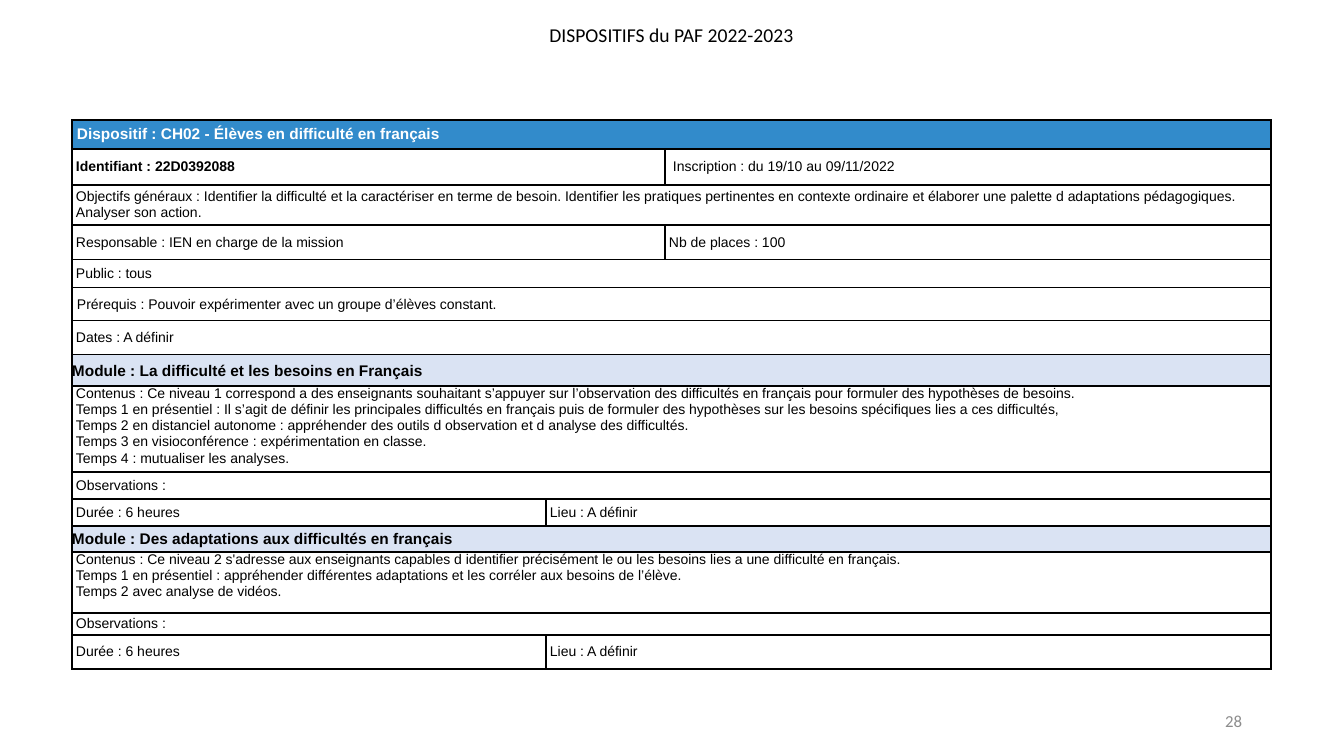
from dataclasses import dataclass
from typing import Optional, Union

from lxml.etree import SubElement
from pptx import Presentation
from pptx.dml.color import RGBColor
from pptx.enum.text import MSO_ANCHOR as Anchor, MSO_AUTO_SIZE as AutoSize, PP_ALIGN as Align
from pptx.oxml.ns import qn
from pptx.slide import Slide
from pptx.table import _Cell as TableCell
from pptx.text.text import TextFrame
from pptx.util import Emu, Pt

PX = 914400 / 100.8


@dataclass(frozen=True)
class Theme:
    black: str = "000000"
    white: str = "FFFFFF"
    grey: str = "8C8C8C"
    header: str = "328BCB"
    module: str = "DAE3F3"
    heading_font: str = "Calibri"
    table_font: str = "Arial"
    title_size: int = 14
    number_size: int = 12
    band_size: int = 11
    cell_size: int = 10
    border: float = 1


THEME = Theme()


@dataclass(frozen=True)
class Entry:
    """Text of one cell; each line is a paragraph."""
    lines: tuple[str, ...]
    size: int = THEME.cell_size
    bold: bool = False
    color: str = THEME.black
    fill: Optional[str] = None
    indent: int = 4
    before: float = 1.4
    spacing: Union[float, Pt, None] = None
    anchor: Anchor = Anchor.MIDDLE


@dataclass(frozen=True)
class Row:
    height: int
    entries: tuple[Entry, ...]


@dataclass(frozen=True)
class Grid:
    top: int
    columns: tuple[int, int]
    rows: tuple[Row, ...]


def px(length: float) -> Emu:
    return Emu(round(length * PX))


def line(text: str, **style) -> Entry:
    return Entry((text,), **style)


def module(name: str) -> Entry:
    return line(f"Module : {name}", size=THEME.band_size, bold=True,
                fill=THEME.module, indent=0, before=2)


def contents(*lines: str) -> Entry:
    return Entry(lines, before=0.8, spacing=0.97, anchor=Anchor.TOP)


OBSERVATIONS = (line("Observations :"),)
PRACTICAL = (line("Durée : 6 heures"), line("Lieu : A définir"))

GRIDS = (
    Grid(120, (593, 606), (
        Row(29, (line("Dispositif : CH02 - Élèves en difficulté en français", size=THEME.band_size,
                      bold=True, color=THEME.white, fill=THEME.header, indent=5, before=0.9),)),
        Row(36, (line("Identifiant : 22D0392088", bold=True, before=2.6),
                 line("Inscription : du 19/10 au 09/11/2022", indent=8, before=0))),
        Row(40, (Entry((
            "Objectifs généraux : Identifier la difficulté et la caractériser en terme de besoin. "
            "Identifier les pratiques pertinentes en contexte ordinaire et élaborer une palette "
            "d adaptations pédagogiques.",
            "Analyser son action."), before=0.2, spacing=Pt(11.3)),)),
        Row(35, (line("Responsable : IEN en charge de la mission", before=2.2),
                 line("Nb de places : 100", before=2.2))),
        Row(28, (line("Public : tous", before=0.5),)),
        Row(33, (line("Prérequis : Pouvoir expérimenter avec un groupe d’élèves constant.", indent=5),)),
        Row(34, (line("Dates : A définir", before=1.8),)),
        Row(32, (module("La difficulté et les besoins en Français"),)),
    )),
    Grid(386, (474, 725), (
        Row(86, (contents(
            "Contenus : Ce niveau 1 correspond a des enseignants souhaitant s’appuyer sur l’observation "
            "des difficultés en français pour formuler des hypothèses de besoins.",
            "Temps 1 en présentiel : Il s’agit de définir les principales difficultés en français puis "
            "de formuler des hypothèses sur les besoins spécifiques lies a ces difficultés,",
            "Temps 2 en distanciel autonome : appréhender des outils d observation et d analyse "
            "des difficultés.",
            "Temps 3 en visioconférence : expérimentation en classe.",
            "Temps 4 : mutualiser les analyses."),)),
        Row(27, OBSERVATIONS),
        Row(27, PRACTICAL),
        Row(26, (module("Des adaptations aux difficultés en français"),)),
    )),
    Grid(552, (474, 725), (
        Row(61, (contents(
            "Contenus : Ce niveau 2 s'adresse aux enseignants capables d identifier précisément "
            "le ou les besoins lies a une difficulté en français.",
            "Temps 1 en présentiel : appréhender différentes adaptations et les corréler aux besoins "
            "de l’élève.",
            "Temps 2 avec analyse de vidéos."),)),
        Row(22, OBSERVATIONS),
        Row(34, PRACTICAL),
    )),
)


def write(frame: TextFrame, *lines: str, size: float, color: str, font: str, bold: bool = False,
          align: Align = Align.LEFT, indent: int = 0, before: float = 0,
          spacing: Union[float, Pt, None] = None) -> None:
    frame.text = "\n".join(lines)
    for paragraph in frame.paragraphs:
        paragraph.alignment = align
        paragraph.space_before = Pt(before)
        paragraph.line_spacing = spacing
        paragraph._p.get_or_add_pPr().set("marL", str(px(indent)))
        style = paragraph.runs[0].font
        style.name, style.size, style.bold = font, Pt(size), bold
        style.color.rgb = RGBColor.from_string(color)


def outline(cell: TableCell) -> None:
    properties = cell._tc.get_or_add_tcPr()
    for side in ("a:lnL", "a:lnR", "a:lnT", "a:lnB"):
        edge = SubElement(properties, qn(side), w=str(Pt(THEME.border)))
        SubElement(SubElement(edge, qn("a:solidFill")), qn("a:srgbClr"), val=THEME.black)


def fill_cell(cell: TableCell, entry: Entry) -> None:
    cell.vertical_anchor = entry.anchor
    if entry.fill:
        cell.fill.solid()
        cell.fill.fore_color.rgb = RGBColor.from_string(entry.fill)
    write(cell.text_frame, *entry.lines, size=entry.size, color=entry.color,
          font=THEME.table_font, bold=entry.bold, indent=entry.indent,
          before=entry.before, spacing=entry.spacing)


def add_grid(slide: Slide, grid: Grid) -> None:
    height = sum(row.height for row in grid.rows)
    table = slide.shapes.add_table(len(grid.rows), len(grid.columns), px(72), px(grid.top),
                                   px(sum(grid.columns)), px(height)).table
    table.first_row = table.horz_banding = False
    for column, width in zip(table.columns, grid.columns):
        column.width = px(width)
    for index, row in enumerate(grid.rows):
        table.rows[index].height = px(row.height)
        for cell in table.rows[index].cells:
            cell.margin_left = cell.margin_right = cell.margin_top = cell.margin_bottom = 0
            outline(cell)
            cell.fill.background()
        if len(row.entries) == 1:
            table.cell(index, 0).merge(table.cell(index, 1))
        for position, entry in enumerate(row.entries):
            fill_cell(table.cell(index, position), entry)


def main() -> None:
    deck = Presentation()
    deck.slide_width, deck.slide_height = px(1344), px(756)
    slide = deck.slides.add_slide(deck.slide_layouts[5])

    title = slide.shapes.title
    title.left, title.top, title.width, title.height = px(535), px(18), px(273), px(34)
    title.text_frame.auto_size = AutoSize.NONE
    title.text_frame.word_wrap = False
    title.text_frame.vertical_anchor = Anchor.TOP
    write(title.text_frame, "DISPOSITIFS du PAF 2022-2023", size=THEME.title_size,
          color=THEME.black, font=THEME.heading_font, align=Align.CENTER)

    page = slide.shapes.add_textbox(px(950), px(701), px(302), px(40)).text_frame
    page.word_wrap = True
    page.vertical_anchor = Anchor.MIDDLE
    write(page, "28", size=THEME.number_size, color=THEME.grey,
          font=THEME.heading_font, align=Align.RIGHT)

    for grid in GRIDS:
        add_grid(slide, grid)
    deck.save("out.pptx")


if __name__ == "__main__":
    main()
